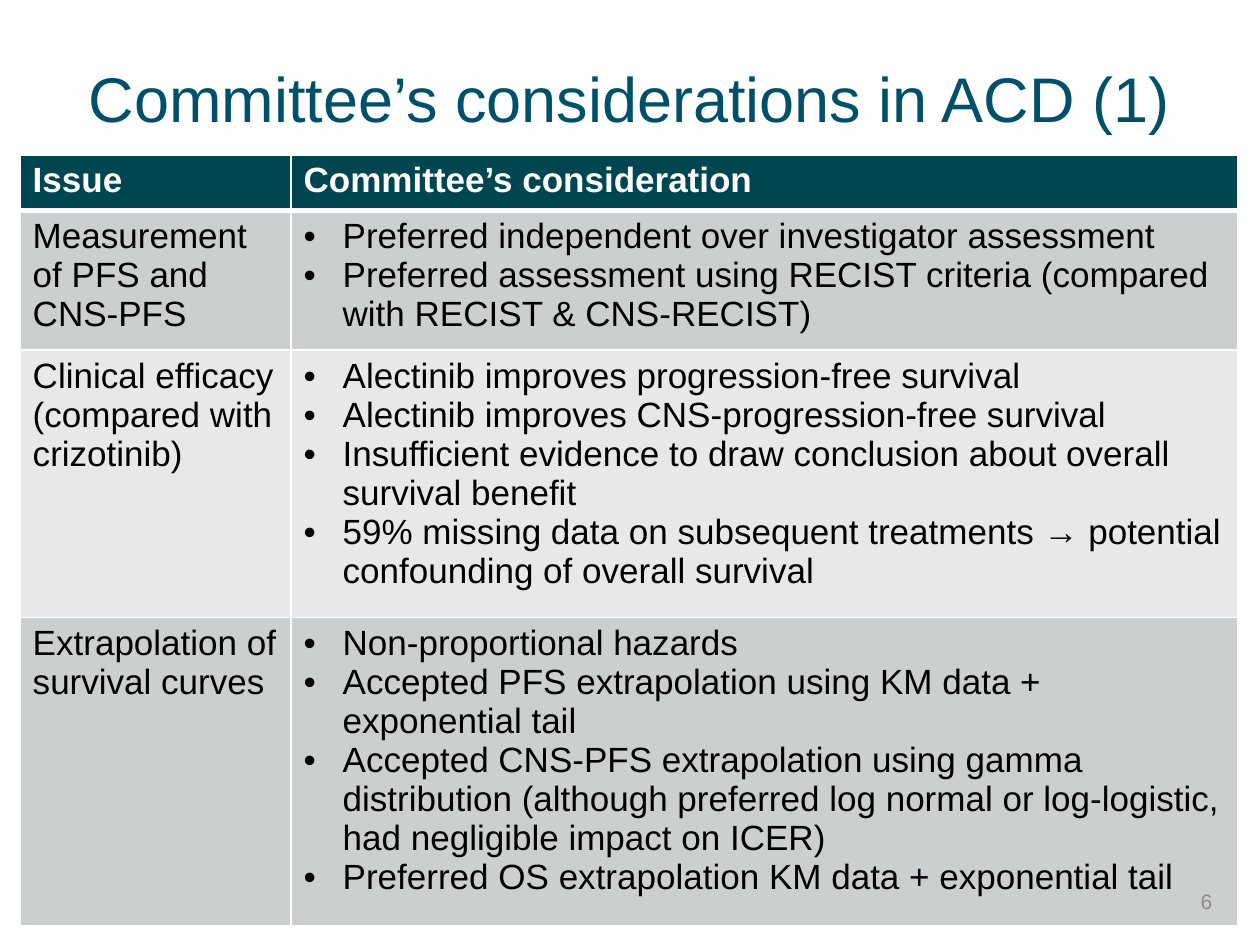
from lxml import etree
from pptx import Presentation
from pptx.dml.color import RGBColor
from pptx.enum import text
from pptx.oxml import ns
from pptx.util import Inches, Pt

WHITE = RGBColor(0xFF, 0xFF, 0xFF)
BLACK = RGBColor(0x00, 0x00, 0x00)
HEADER = RGBColor(0x00, 0x46, 0x50)
BANDS = (RGBColor(0xCC, 0xCF, 0xD0), RGBColor(0xE7, 0xE9, 0xE9))
TITLE = RGBColor(0x00, 0x50, 0x6A)
GREY = RGBColor(0x8C, 0x8C, 0x8C)

COLUMN_WIDTHS = (2.15, 7.51)
ROW_HEIGHTS = (0.44, 1.11, 2.12, 2.45)
ISSUES = (
    ("Measurement of PFS and CNS-PFS", (
        "Preferred independent over investigator assessment",
        "Preferred assessment using RECIST criteria (compared with RECIST & CNS-RECIST)",
    )),
    ("Clinical efficacy (compared with crizotinib)", (
        "Alectinib improves progression-free survival",
        "Alectinib improves CNS-progression-free survival",
        "Insufficient evidence to draw conclusion about overall survival benefit",
        "59% missing data on subsequent treatments → potential confounding of overall survival",
    )),
    ("Extrapolation of survival curves", (
        "Non-proportional hazards",
        "Accepted PFS extrapolation using KM data + exponential tail",
        "Accepted CNS-PFS extrapolation using gamma distribution (although preferred "
        "log normal or log-logistic, had negligible impact on ICER)",
        "Preferred OS extrapolation KM data + exponential tail",
    )),
)


def format_runs(tf, size, color, bold=False):
    """Set the font of every run in a text frame."""
    for p in tf.paragraphs:
        for r in p.runs:
            r.font.name = "Arial"
            r.font.size = Pt(size)
            r.font.bold = bold
            r.font.color.rgb = color


def add_bullet(p):
    """Give a paragraph a round bullet with a hanging indent."""
    pPr = p._p.get_or_add_pPr()
    pPr.set("marL", str(Inches(0.31)))
    pPr.set("indent", str(-Inches(0.31)))
    etree.SubElement(pPr, ns.qn("a:buFont"), typeface="Arial")
    etree.SubElement(pPr, ns.qn("a:buChar"), char="•")


def set_borders(cell, **widths):
    """Draw white borders of the given widths on the sides L, R, T and B."""
    tcPr = cell._tc.get_or_add_tcPr()
    for side, width in widths.items():
        ln = etree.SubElement(tcPr, ns.qn(f"a:ln{side}"), w=str(Pt(width)))
        fill = etree.SubElement(ln, ns.qn("a:solidFill"))
        etree.SubElement(fill, ns.qn("a:srgbClr"), val=str(WHITE))


def fill_cell(cell, lines, fill, color, top=1, bottom=1, bold=False, bullets=False):
    """Write and style one table cell."""
    set_borders(cell, L=1, R=1, T=top, B=bottom)
    cell.fill.solid()
    cell.fill.fore_color.rgb = fill
    tf = cell.text_frame
    tf.text = "\n".join(lines)
    format_runs(tf, 20, color, bold)
    if bullets:
        for p in tf.paragraphs:
            add_bullet(p)


def add_issue_table(s):
    """Add the table of issues and considerations."""
    table = s.shapes.add_table(
        len(ROW_HEIGHTS), len(COLUMN_WIDTHS), Inches(0.16), Inches(1.23),
        Inches(sum(COLUMN_WIDTHS)), Inches(sum(ROW_HEIGHTS))).table
    for column, width in zip(table.columns, COLUMN_WIDTHS):
        column.width = Inches(width)
    for row, height in zip(table.rows, ROW_HEIGHTS):
        row.height = Inches(height)
    for col, heading in enumerate(("Issue", "Committee’s consideration")):
        fill_cell(table.cell(0, col), [heading], HEADER, WHITE, bottom=3, bold=True)
    for row, (issue, points) in enumerate(ISSUES, 1):
        band = BANDS[(row - 1) % 2]
        top = 3 if row == 1 else 1
        fill_cell(table.cell(row, 0), [issue], band, BLACK, top)
        fill_cell(table.cell(row, 1), points, band, BLACK, top, bullets=True)


def add_label(s, words, left, top, width, height, size, color, align):
    """Add a vertically centred text box and return its paragraph."""
    sp = s.shapes.add_textbox(Inches(left), Inches(top), Inches(width), Inches(height))
    tf = sp.text_frame
    tf.word_wrap = True
    tf.vertical_anchor = text.MSO_ANCHOR.MIDDLE
    tf.text = words
    format_runs(tf, size, color)
    p = tf.paragraphs[0]
    p.alignment = align
    return p


def main():
    """Build and save the slide."""
    prs = Presentation()
    prs.slide_width, prs.slide_height = Inches(10), Inches(7.5)
    s = prs.slides.add_slide(prs.slide_layouts[6])
    add_issue_table(s)
    title = add_label(s, "Committee’s considerations in ACD (1)",
                      0.27, 0.39, 9.45, 0.84, 36, TITLE, text.PP_ALIGN.CENTER)
    title.line_spacing = 0.9
    add_label(s, "6", 7.47, 6.95, 2.25, 0.4, 12, GREY, text.PP_ALIGN.RIGHT)
    prs.save("out.pptx")


if __name__ == "__main__":
    main()
